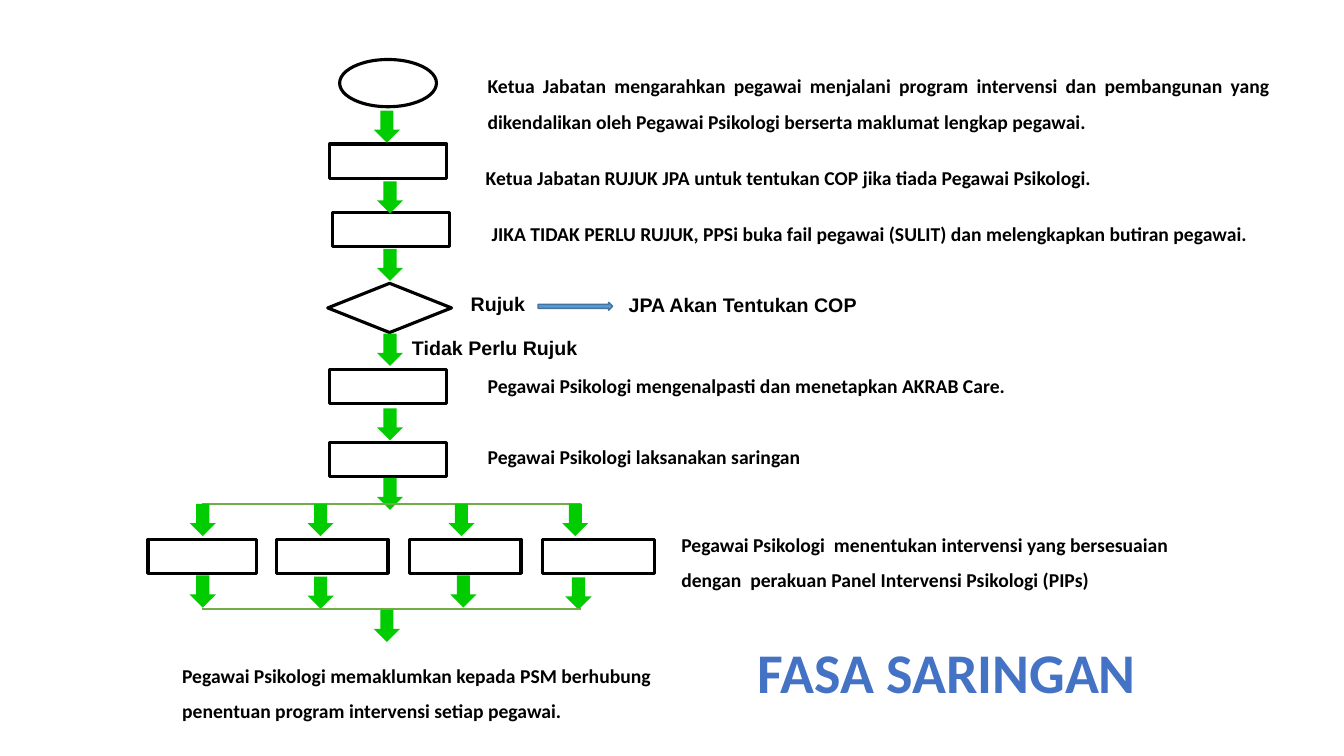
from lxml.etree import SubElement
from pptx import Presentation
from pptx.dml.color import RGBColor
from pptx.enum.shapes import MSO_CONNECTOR, MSO_SHAPE
from pptx.enum.text import MSO_AUTO_SIZE, PP_ALIGN
from pptx.oxml.ns import qn
from pptx.util import Cm, Pt

COLOURS = {
    "black": "000000", "white": "FFFFFF", "green": "00CC00", "rail": "70AD47",
    "blue": "5B9BD5", "blue edge": "43739E", "title": "4472C4",
}
STEP_SIZE = (2.95, 0.86)
ARROW_SIZE = (0.66, 0.81)
RAIL_LEFT, RAIL_RIGHT = 5.08, 14.63
BRANCH_TOP = 13.59

STEPS = [(8.38, 5.36), (8.31, 3.63), (8.31, 9.32), (8.31, 11.15)]
MAIN_ARROWS = [(9.42, 2.79), (9.5, 4.57), (9.5, 6.27), (9.5, 8.41),
               (9.5, 10.29), (9.5, 12.04)]
# Each branch: box left, box width, arrow in (left), arrow out (left, top)
BRANCHES = [
    (3.73, 2.74, 4.78, (4.78, 14.5)),
    (6.96, 2.82, 7.75, (7.75, 14.53)),
    (10.31, 2.82, 11.3, (11.35, 14.5)),
    (13.67, 2.82, 14.17, (14.25, 14.55)),
]

NOTE = {"alignment": PP_ALIGN.JUSTIFY, "line_spacing": 1.5}
LABEL = {"alignment": PP_ALIGN.CENTER}
TITLE = {"alignment": PP_ALIGN.LEFT}
NOTE_FONT = {"name": "Calibri", "size": Pt(14), "bold": True}
LABEL_FONT = {"name": "Arial", "size": Pt(14), "bold": True}
TITLE_FONT = {"name": "Calibri", "size": Pt(40), "bold": True}

# Each note: position and size, wrapping, lines
NOTES = [
    ((12.04, 1.45, 20.22, 2.06), True,
     ["Ketua Jabatan mengarahkan pegawai menjalani program intervensi dan "
      "pembangunan yang dikendalikan oleh Pegawai Psikologi berserta "
      "maklumat lengkap pegawai."]),
    ((11.99, 3.76, 15.88, 1.07), False,
     ["Ketua Jabatan RUJUK JPA untuk tentukan COP jika tiada Pegawai Psikologi."]),
    ((12.14, 5.18, 20.22, 1.14), True,
     ["JIKA TIDAK PERLU RUJUK, PPSi buka fail pegawai (SULIT) dan "
      "melengkapkan butiran pegawai."]),
    ((12.04, 8.99, 13.64, 1.14), False,
     ["Pegawai Psikologi mengenalpasti dan menetapkan AKRAB Care."]),
    ((12.04, 10.8, 8.56, 1.14), True, ["Pegawai Psikologi laksanakan saringan"]),
    ((16.92, 13, 14.4, 2.06), True,
     ["Pegawai Psikologi  menentukan intervensi yang bersesuaian",
      "dengan  perakuan Panel Intervensi Psikologi (PIPs)"]),
    ((4.34, 16.31, 12.52, 1.96), False,
     ["Pegawai Psikologi memaklumkan kepada PSM berhubung",
      "penentuan program intervensi setiap pegawai."]),
]
LABELS = [
    ((10.85, 7.24, 3.4, 0.86), "Rujuk"),
    ((15.19, 7.26, 7.06, 0.86), "JPA Akan Tentukan COP"),
    ((10.08, 8.33, 4.78, 0.86), "Tidak Perlu Rujuk"),
]


def colour(name):
    return RGBColor.from_string(COLOURS[name])


def set_all(target, values):
    for name, value in values.items():
        setattr(target, name, value)


def add_figure(page, kind, place, fill="white", edge="black", width=2.25):
    figure = page.shapes.add_shape(kind, *map(Cm, place))
    figure.shadow.inherit = False
    figure.fill.solid()
    figure.fill.fore_color.rgb = colour(fill)
    if edge:
        figure.line.color.rgb = colour(edge)
        figure.line.width = Pt(width)
    else:
        figure.line.fill.background()


def add_down_arrow(page, left, top):
    add_figure(page, MSO_SHAPE.DOWN_ARROW, (left, top, *ARROW_SIZE), "green", None)


def add_rail(page, top):
    """Draw the horizontal line that splits or gathers the branches."""
    rail = page.shapes.add_connector(
        MSO_CONNECTOR.STRAIGHT, Cm(RAIL_LEFT), Cm(top), Cm(RAIL_RIGHT), Cm(top))
    rail.line.color.rgb = colour("rail")
    rail.line.width = Pt(1.5)
    SubElement(rail._element.spPr, qn("a:effectLst"))


def add_text(page, place, lines, layout, font, ink="black", wrap=True):
    box = page.shapes.add_textbox(*map(Cm, place))
    frame = box.text_frame
    set_all(frame, {"word_wrap": wrap, "auto_size": MSO_AUTO_SIZE.SHAPE_TO_FIT_TEXT})
    for index, line in enumerate(lines):
        para = frame.add_paragraph() if index else frame.paragraphs[0]
        set_all(para, layout)
        span = para.add_run()
        span.text = line
        set_all(span.font, font)
        span.font.color.rgb = colour(ink)


def add_main_flow(page):
    add_figure(page, MSO_SHAPE.OVAL, (8.56, 1.5, 2.44, 1.19))
    for step in STEPS:
        add_figure(page, MSO_SHAPE.RECTANGLE, (*step, *STEP_SIZE))
    add_figure(page, MSO_SHAPE.DIAMOND, (8.26, 7.14, 3.12, 1.24))
    for arrow in MAIN_ARROWS:
        add_down_arrow(page, *arrow)
    add_figure(page, MSO_SHAPE.RIGHT_ARROW, (13.56, 7.62, 1.88, 0.2),
               "blue", "blue edge", 1)


def add_branches(page):
    add_rail(page, 12.7)
    for left, width, arrow_left, arrow_out in BRANCHES:
        add_down_arrow(page, arrow_left, 12.7)
        add_figure(page, MSO_SHAPE.RECTANGLE,
                   (left, BRANCH_TOP, width, STEP_SIZE[1]))
        add_down_arrow(page, *arrow_out)
    add_rail(page, 15.34)
    add_down_arrow(page, 9.42, 15.37)


def main():
    deck = Presentation()
    set_all(deck, {"slide_width": Cm(33.87), "slide_height": Cm(19.05)})
    page = deck.slides.add_slide(deck.slide_layouts[6])
    add_main_flow(page)
    add_branches(page)
    for place, wrap, lines in NOTES:
        add_text(page, place, lines, NOTE, NOTE_FONT, wrap=wrap)
    for place, label in LABELS:
        add_text(page, place, [label], LABEL, LABEL_FONT)
    add_text(page, (18.85, 15.93, 11.48, 1.96), ["FASA SARINGAN"],
             TITLE, TITLE_FONT, "title")
    deck.save("out.pptx")


if __name__ == "__main__":
    main()
